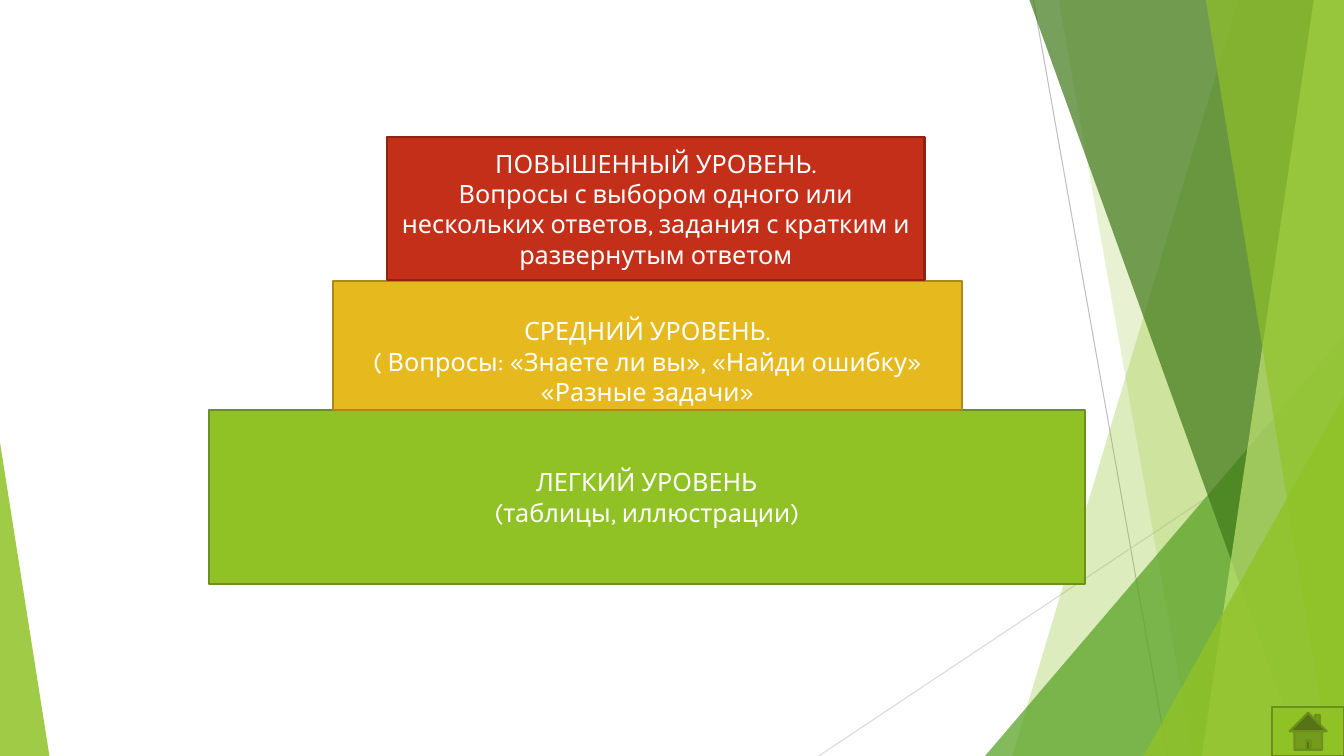
from dataclasses import dataclass

from lxml.etree import SubElement
from pptx import Presentation
from pptx.dml.color import RGBColor
from pptx.enum.shapes import MSO_CONNECTOR as Link, MSO_SHAPE as Preset
from pptx.enum.text import MSO_ANCHOR as Anchor, PP_ALIGN as Align
from pptx.oxml.ns import qn
from pptx.util import Emu, Pt

PX = 9144  # EMU in one px, 100 px to the inch
WIDTH, HEIGHT = 1333, 750

WHITE = RGBColor(0xFF, 0xFF, 0xFF)
GREEN = RGBColor(0x90, 0xC2, 0x26)
DARK_GREEN = RGBColor(0x6B, 0x90, 0x1C)
LEAF = RGBColor(0x54, 0xA0, 0x21)
FOREST = RGBColor(0x3F, 0x78, 0x19)
LIME = RGBColor(0xC0, 0xE4, 0x74)
GOLD = RGBColor(0xE6, 0xB9, 0x1E)
DARK_GOLD = RGBColor(0xAA, 0x89, 0x16)
RED = RGBColor(0xC4, 0x2F, 0x1A)
DARK_RED = RGBColor(0x91, 0x23, 0x13)
GREY = RGBColor(0xBF, 0xBF, 0xBF)
PALE_GREY = RGBColor(0xD9, 0xD9, 0xD9)


@dataclass(frozen=True)
class Ray:
    start: tuple[int, int]
    end: tuple[int, int]
    color: RGBColor


@dataclass(frozen=True)
class Band:
    """Full-height facet running to the right edge of the slide."""
    top: int
    bottom: int
    color: RGBColor
    opacity: int


@dataclass(frozen=True)
class Wedge:
    """Right triangle standing on the bottom edge of the slide."""
    left: int
    top: int
    width: int
    apex: float
    color: RGBColor
    opacity: int


@dataclass(frozen=True)
class Level:
    box: tuple[int, int, int, int]
    fill: RGBColor
    border: RGBColor
    lines: tuple[str, ...]
    top_inset: int = 5


RAYS = (
    Ray((1025, 0), (1158, HEIGHT), GREY),
    Ray((WIDTH, 403), (812, HEIGHT), PALE_GREY),
)
FACETS = (
    Band(1228, 1004, GREEN, 30),
    Band(1050, 1183, GREEN, 20),
    Wedge(977, 333, 356, 1, LEAF, 72),
    Band(1021, 1291, FOREST, 70),
    Band(1303, 1192, LIME, 70),
    Band(1196, 1318, GREEN, 65),
    Wedge(1134, 393, 199, 1, GREEN, 80),
    Wedge(0, 439, 49, 0, GREEN, 85),
)
LEVELS = (
    Level((207, 407, 869, 172), GREEN, DARK_GREEN,
          ("ЛЕГКИЙ УРОВЕНЬ", "(таблицы, иллюстрации)")),
    Level((330, 279, 624, 128), GOLD, DARK_GOLD,
          ("СРЕДНИЙ УРОВЕНЬ.",
           "( Вопросы: «Знаете ли вы», «Найди ошибку» «Разные задачи»"),
          top_inset=35),
    Level((384, 136, 533, 142), RED, DARK_RED,
          ("ПОВЫШЕННЫЙ УРОВЕНЬ.",
           "Вопросы с выбором одного или нескольких ответов, "
           "задания с кратким и развернутым ответом")),
)
HOME_BOX = (1262, 701, 71, 49)


def px(*lengths: int) -> list[Emu]:
    return [Emu(length * PX) for length in lengths]


def paint(shape, fill: RGBColor, border: RGBColor | None = None,
          opacity: int = 100) -> None:
    shape.shadow.inherit = False
    shape.fill.solid()
    shape.fill.fore_color.rgb = fill
    if opacity < 100:
        tint = shape.fill._xPr.find(qn("a:solidFill"))[0]
        SubElement(tint, qn("a:alpha")).set("val", str(opacity * 1000))
    if border is None:
        shape.line.fill.background()
    else:
        shape.line.color.rgb = border
        shape.line.width = Pt(1.5)


def write(shape, lines: tuple[str, ...], *, size: int = 18,
          font: str = "Karla", color: RGBColor = WHITE,
          top_inset: int = 5) -> None:
    frame = shape.text_frame
    frame.word_wrap = True
    frame.vertical_anchor = Anchor.MIDDLE
    frame.margin_top = Emu(top_inset * PX)
    for index, line in enumerate(lines):
        paragraph = frame.add_paragraph() if index else frame.paragraphs[0]
        paragraph.alignment = Align.CENTER
        run = paragraph.add_run()
        run.text = line
        run.font.size, run.font.name = Pt(size), font
        run.font.color.rgb = color


def draw_ray(shapes, ray: Ray) -> None:
    line = shapes.add_connector(Link.STRAIGHT, *px(*ray.start, *ray.end))
    line.line.color.rgb = ray.color
    line.line.width = Pt(0.75)
    SubElement(line._element.spPr, qn("a:effectLst"))


def draw_facet(shapes, facet: Band | Wedge) -> None:
    if isinstance(facet, Band):
        outline = shapes.build_freeform(facet.top, 0, scale=PX)
        outline.add_line_segments(
            [(WIDTH, 0), (WIDTH, HEIGHT), (facet.bottom, HEIGHT)], close=True)
        shape = outline.convert_to_shape()
    else:
        shape = shapes.add_shape(
            Preset.ISOSCELES_TRIANGLE,
            *px(facet.left, facet.top, facet.width, HEIGHT - facet.top))
        shape.adjustments[0] = facet.apex
    paint(shape, facet.color, opacity=facet.opacity)


def draw_level(shapes, level: Level) -> None:
    step = shapes.add_shape(Preset.RECTANGLE, *px(*level.box))
    paint(step, level.fill, level.border)
    write(step, level.lines, top_inset=level.top_inset)


def main() -> None:
    deck = Presentation()
    deck.slide_width, deck.slide_height = px(WIDTH, HEIGHT)
    shapes = deck.slides.add_slide(deck.slide_layouts[6]).shapes

    # Faceted backdrop
    for ray in RAYS:
        draw_ray(shapes, ray)
    for facet in FACETS:
        draw_facet(shapes, facet)

    # Steps of difficulty, easiest at the bottom
    for level in LEVELS:
        draw_level(shapes, level)

    # Home button
    home = shapes.add_shape(Preset.ACTION_BUTTON_HOME, *px(*HOME_BOX))
    paint(home, GREEN, DARK_GREEN)

    deck.save("out.pptx")


if __name__ == "__main__":
    main()
